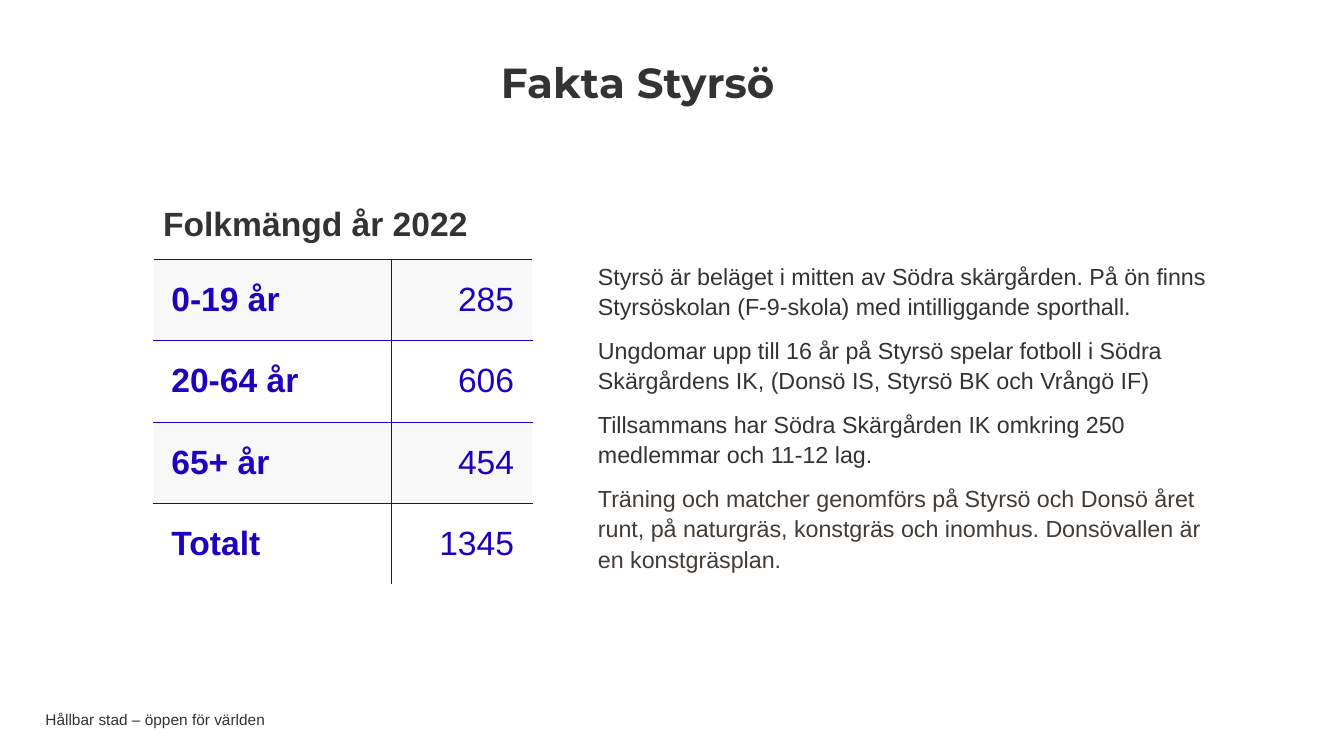
from lxml.etree import SubElement
from pptx import Presentation
from pptx.dml.color import RGBColor
from pptx.enum.text import MSO_ANCHOR, PP_ALIGN
from pptx.oxml.ns import qn
from pptx.util import Inches, Pt

DARK = RGBColor(0x33, 0x33, 0x33)
BROWN = RGBColor(0x43, 0x3B, 0x35)
BLUE = RGBColor(0x1E, 0x00, 0xBE)
PALE = RGBColor(0xF8, 0xF8, 0xF8)
WHITE = RGBColor(0xFF, 0xFF, 0xFF)


class Deck:
    """Slide on a grid of 100 columns by 100 rows."""

    def __init__(self):
        self.prs = Presentation()
        self.prs.slide_width, self.prs.slide_height = Inches(13.33), Inches(7.5)
        self.s = self.prs.slides.add_slide(self.prs.slide_layouts[6])

    def cols(self, n):
        return int(self.prs.slide_width * n / 100)

    def rows(self, n):
        return int(self.prs.slide_height * n / 100)

    def box(self, x, y, w, h):
        return self.cols(x), self.rows(y), self.cols(w), self.rows(h)

    def run(self, p, text, size, color, bold=False, font="Arial"):
        r = p.add_run()
        r.text = text
        r.font.name, r.font.size, r.font.bold = font, Pt(size), bold
        r.font.color.rgb = color

    def text(self, at, paragraphs, size, bold=False, font="Arial", inset=(0, 0),
             anchor=MSO_ANCHOR.TOP, align=PP_ALIGN.LEFT, spacing=1.0, before=0, after=0):
        tf = self.s.shapes.add_textbox(*self.box(*at)).text_frame
        tf.word_wrap, tf.vertical_anchor = True, anchor
        tf.margin_left = tf.margin_right = Inches(inset[0])
        tf.margin_top = tf.margin_bottom = Inches(inset[1])
        for i, (text, color) in enumerate(paragraphs):
            p = tf.add_paragraph() if i else tf.paragraphs[0]
            p.alignment, p.line_spacing = align, spacing
            p.space_before, p.space_after = Pt(before if i else 0), Pt(after)
            self.run(p, text, size, color, bold, font)

    def border(self, cell, sides):
        tcPr = cell._tc.get_or_add_tcPr()
        for side in sides:
            ln = SubElement(tcPr, qn(f"a:ln{side}"), w=str(Pt(0.5)))
            fill = SubElement(ln, qn("a:solidFill"))
            SubElement(fill, qn("a:srgbClr"), val=str(BLUE))

    def table(self, at, widths, data, size):
        shape = self.s.shapes.add_table(len(data), len(widths), *self.box(*at))
        table = shape.table
        table.first_row = table.horz_banding = False
        for column, width in zip(table.columns, widths):
            column.width = self.cols(width)
        for i, record in enumerate(data):
            table.rows[i].height = self.rows(at[3] / len(data))
            for j, value in enumerate(record):
                cell = table.cell(i, j)
                cell.vertical_anchor = MSO_ANCHOR.MIDDLE
                cell.margin_left = cell.margin_right = Inches(0.18)
                cell.margin_top = cell.margin_bottom = Inches(0.09)
                # Inner column line, row lines above and between
                bottom = "B" if i < len(data) - 1 else ""
                self.border(cell, ("L" if j else "R") + "T" + bottom)
                cell.fill.solid()
                cell.fill.fore_color.rgb = WHITE if i % 2 else PALE
                p = cell.text_frame.paragraphs[0]
                p.alignment = PP_ALIGN.RIGHT if j else PP_ALIGN.LEFT
                self.run(p, value, size, BLUE, bold=j == 0)


def main():
    deck = Deck()

    # Footer and title
    deck.text((3.38, 94.13, 70.89, 2.13), [("Hållbar stad – öppen för världen", DARK)], 11,
              anchor=MSO_ANCHOR.MIDDLE)
    deck.text((16.28, 5.87, 62.34, 10.8), [("Fakta Styrsö", DARK)], 30, True, "Montserrat",
              inset=(0, 0.05), anchor=MSO_ANCHOR.MIDDLE, align=PP_ALIGN.CENTER, spacing=0.9)

    # Facts about the island
    facts = [
        ("Styrsö är beläget i mitten av Södra skärgården. På ön finns Styrsöskolan "
         "(F-9-skola) med intilliggande sporthall.", DARK),
        ("Ungdomar upp till 16 år på Styrsö spelar fotboll i Södra Skärgårdens IK, "
         "(Donsö IS, Styrsö BK och Vrångö IF)", DARK),
        ("Tillsammans har Södra Skärgården IK omkring 250 medlemmar och 11-12 lag.", DARK),
        ("Träning och matcher genomförs på Styrsö och Donsö året runt, på naturgräs, "
         "konstgräs och inomhus. Donsövallen är en konstgräsplan.", BROWN),
    ]
    deck.text((44.49, 34.27, 45.61, 43.07), facts, 16.6, spacing=1.1, before=6, after=3)

    # Population table with its heading
    population = [("0-19 år", "285"), ("20-64 år", "606"), ("65+ år", "454"), ("Totalt", "1345")]
    deck.table((11.4, 34.27, 28.2, 43.07), (17.7, 10.5), population, 24)
    deck.text((11.4, 26.13, 50, 6.67), [("Folkmängd år 2022", DARK)], 24, True,
              inset=(0.1, 0.05))

    deck.prs.save("out.pptx")


if __name__ == "__main__":
    main()
